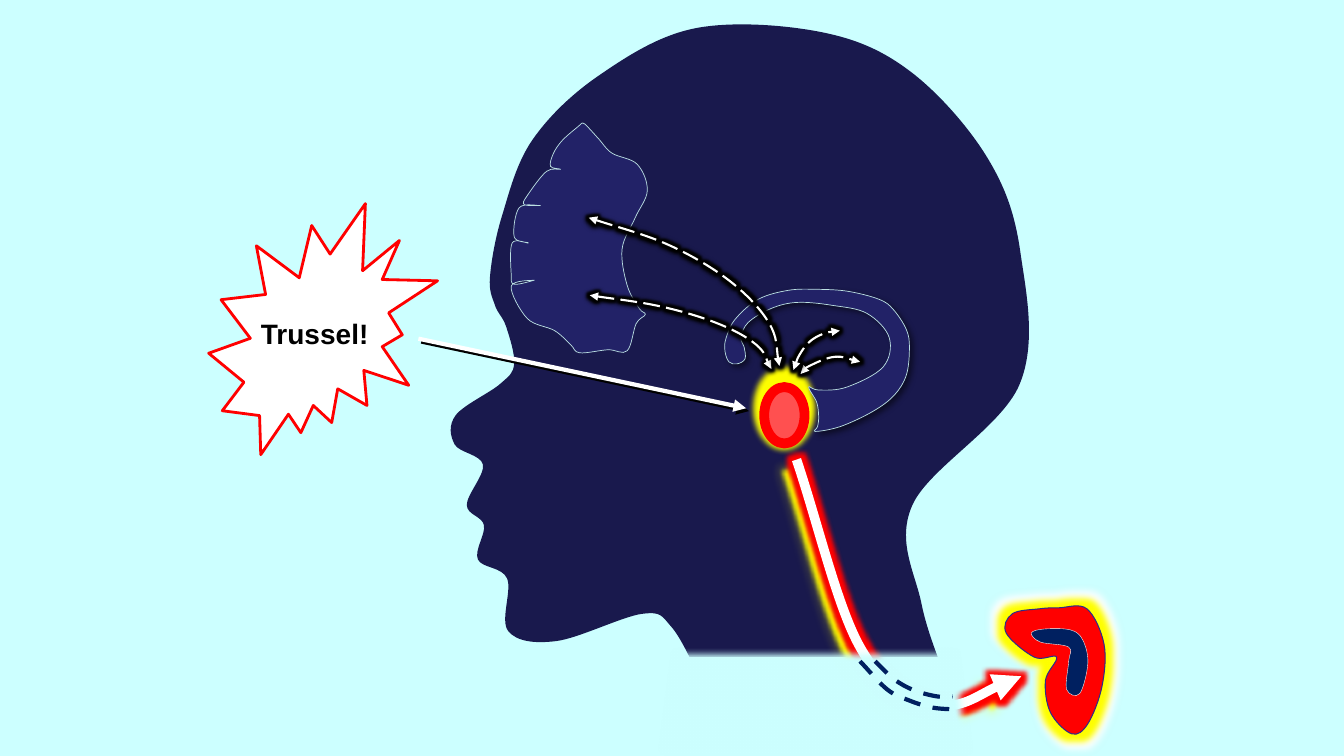
"""Build a slide showing how a perceived threat sets off the stress response."""
import lxml.etree
import pptx
import pptx.dml.color
import pptx.enum.dml
import pptx.enum.shapes
import pptx.enum.text
import pptx.oxml.ns
import pptx.util

PX = 9144
RGBColor = pptx.dml.color.RGBColor
MSO_SHAPE = pptx.enum.shapes.MSO_SHAPE
DASH = pptx.enum.dml.MSO_LINE.DASH
LONG_DASH = pptx.enum.dml.MSO_LINE.LONG_DASH
qn = pptx.oxml.ns.qn

SKY = RGBColor(0xCC, 0xFF, 0xFF)
HEAD_BLUE = RGBColor(0x19, 0x19, 0x4D)
BRAIN_BLUE = RGBColor(0x22, 0x22, 0x67)
BRAIN_EDGE = RGBColor(0xBB, 0xE0, 0xE3)
GLAND_EDGE = RGBColor(0x2D, 0x2D, 0x8A)
NAVY = RGBColor(0x00, 0x20, 0x60)
RED = RGBColor(0xFF, 0x00, 0x00)
SOFT_RED = RGBColor(0xFF, 0x50, 0x50)
YELLOW = RGBColor(0xFF, 0xFF, 0x00)
WHITE = RGBColor(0xFF, 0xFF, 0xFF)
BLACK = RGBColor(0x00, 0x00, 0x00)


def draw_curve(knots, closed=False):
    """Draw a smooth curve through the knots."""
    knots = [(x * PX, y * PX) for x, y in knots]
    if closed:
        chain = [knots[-1], *knots, *knots[:2]]
    else:
        (ax, ay), (bx, by) = knots[:2]
        (yx, yy), (zx, zy) = knots[-2:]
        chain = [(2 * ax - bx, 2 * ay - by), *knots, (2 * zx - yx, 2 * zy - yy)]
    builder = shapes.build_freeform(*knots[0])
    builder.add_line_segments(chain[2:-1], close=closed)
    shape = builder.convert_to_shape()
    corner = (shape.left, shape.top)
    segments = list(shape._element.iter(qn("a:lnTo")))
    for segment, before, start, end, after in zip(segments, chain, chain[1:], chain[2:], chain[3:]):
        bend = lxml.etree.Element(qn("a:cubicBezTo"))
        leave = [s + (e - b) / 6 for b, s, e in zip(before, start, end)]
        arrive = [e - (a - s) / 6 for s, e, a in zip(start, end, after)]
        for point in (leave, arrive, end):
            x, y = (str(round(value - origin)) for value, origin in zip(point, corner))
            lxml.etree.SubElement(bend, qn("a:pt"), x=x, y=y)
        segment.getparent().replace(segment, bend)
    return shape


def paint(shape, fill=None, line=None, width=1, dash=None, ends=(),
          glow=None, shadow=None, soft=0):
    """Set fill, line, arrowheads and effects of a shape."""
    if hasattr(shape, "fill"):
        if fill is None:
            shape.fill.background()
        else:
            shape.fill.solid()
            shape.fill.fore_color.rgb = fill
    if line is None:
        shape.line.fill.background()
    else:
        shape.line.color.rgb = line
        shape.line.width = pptx.util.Pt(width)
        if dash:
            shape.line.dash_style = dash
        for end in ends:
            lxml.etree.SubElement(shape.line._get_or_add_ln(), qn(end), type="triangle")
    effects = lxml.etree.SubElement(shape._element.spPr, qn("a:effectLst"))
    for tag, effect in (("a:glow", glow), ("a:outerShdw", shadow)):
        if effect:
            color, alpha, values = effect
            node = lxml.etree.SubElement(effects, qn(tag),
                                         {key: str(value) for key, value in values.items()})
            tint = lxml.etree.SubElement(node, qn("a:srgbClr"), val=str(color))
            lxml.etree.SubElement(tint, qn("a:alpha"), val=str(alpha * 1000))
    if soft:
        lxml.etree.SubElement(effects, qn("a:softEdge"), rad=str(soft * PX))


presentation = pptx.Presentation()
presentation.slide_width = 1333 * PX
presentation.slide_height = 750 * PX
slide = presentation.slides.add_slide(presentation.slide_layouts[6])
slide.background.fill.solid()
slide.background.fill.fore_color.rgb = SKY
shapes = slide.shapes

head = draw_curve([
    (697, 677), (666, 622), (637, 609), (552, 636), (504, 626), (503, 574), (474, 555),
    (480, 521), (463, 501), (479, 461), (451, 441), (452, 412), (496, 381), (510, 361),
    (502, 324), (491, 303), (486, 275), (498, 214), (528, 139), (594, 75), (690, 28),
    (815, 32), (903, 71), (979, 156), (1012, 250), (1011, 382), (905, 501), (914, 599),
    (943, 688)])
paint(head, HEAD_BLUE)

neck_cover = shapes.add_shape(MSO_SHAPE.RECTANGLE, 652 * PX, 652 * PX, 390 * PX, 97 * PX)
paint(neck_cover, SKY)

nerve = draw_curve([(790, 456), (853, 642), (927, 699), (1013, 671)])
paint(nerve, line=WHITE, width=6.75, ends=["a:tailEnd"],
      glow=(RED, 100, {"rad": 10 * PX}),
      shadow=(YELLOW, 100, {"blurRad": 5 * PX, "dist": 14 * PX, "dir": 135 * 60000}))

hypothalamus = shapes.add_shape(MSO_SHAPE.OVAL, 758 * PX, 384 * PX, 40 * PX, 56 * PX)
paint(hypothalamus, SOFT_RED, RED, 7,
      shadow=(YELLOW, 100, {"blurRad": 6 * PX, "sx": 122000, "sy": 125000, "algn": "b"}))

threat_arrow = shapes.add_connector(pptx.enum.shapes.MSO_CONNECTOR.STRAIGHT,
                                    415 * PX, 336 * PX, 740 * PX, 405 * PX)
paint(threat_arrow, line=WHITE, width=3, ends=["a:tailEnd"],
      shadow=(BLACK, 100, {"dist": 4 * PX, "dir": 45 * 60000}))

gland = draw_curve([
    (1004, 609), (1031, 604), (1050, 603), (1078, 604), (1095, 639), (1093, 681),
    (1079, 718), (1063, 728), (1042, 707), (1037, 675), (1048, 652), (1026, 652),
    (998, 628)], closed=True)
paint(gland, RED, GLAND_EDGE, 0.75,
      glow=(YELLOW, 100, {"rad": 14 * PX}),
      shadow=(WHITE, 100, {"sx": 110000, "sy": 110000, "algn": "ctr"}))

gland_core = draw_curve([
    (1036, 624), (1062, 625), (1074, 635), (1079, 658), (1071, 688), (1058, 684),
    (1060, 656), (1060, 642), (1032, 637), (1023, 628)], closed=True)
paint(gland_core, NAVY, WHITE, 0.25)

body_fade = shapes.add_shape(MSO_SHAPE.TRAPEZOID, 651 * PX, 642 * PX, 316 * PX, 108 * PX)
body_fade.adjustments[0] = 0.13
paint(body_fade, SKY, soft=7)

for hidden_nerve in (
        [(868, 656), (887, 674), (907, 685), (930, 691), (945, 691)],
        [(853, 656), (880, 684), (902, 695), (925, 702), (949, 704)]):
    paint(draw_curve(hidden_nerve), line=NAVY, width=3, dash=DASH)

hippocampus = draw_curve([
    (802, 384), (810, 399), (812, 413), (811, 423), (809, 428), (834, 423), (866, 408),
    (887, 392), (899, 372), (902, 345), (899, 327), (886, 307), (872, 297), (841, 289),
    (810, 287), (782, 288), (752, 297), (729, 317), (720, 336), (719, 348), (723, 359),
    (731, 361), (739, 356), (738, 344), (735, 335), (742, 320), (765, 306), (791, 300),
    (826, 303), (860, 311), (882, 335), (876, 364), (840, 384), (812, 387)], closed=True)
paint(hippocampus, BRAIN_BLUE, BRAIN_EDGE, 0.5,
      shadow=(BLACK, 50, {"blurRad": 6 * PX, "dist": 4 * PX, "dir": 45 * 60000}))

frontal_lobe = draw_curve([
    (566, 342), (575, 350), (603, 347), (622, 348), (631, 321), (640, 312), (634, 306),
    (622, 283), (617, 247), (630, 216), (642, 189), (632, 163), (607, 152), (594, 138),
    (583, 126), (578, 122), (574, 125), (558, 139), (549, 152), (546, 165), (556, 168),
    (542, 170), (523, 194), (520, 203), (536, 204), (515, 206), (510, 235), (524, 241),
    (508, 241), (507, 272), (510, 282), (530, 278), (507, 284), (523, 316), (550, 328)],
    closed=True)
paint(frontal_lobe, BRAIN_BLUE, BRAIN_EDGE, 0.5)

for signal in (
        [(585, 293), (655, 304), (712, 321), (750, 342), (765, 366)],
        [(584, 216), (663, 243), (724, 279), (763, 321), (773, 363)],
        [(794, 371), (803, 363), (828, 354), (853, 359)],
        [(787, 367), (793, 352), (803, 339), (817, 331), (833, 328)]):
    paint(draw_curve(signal), line=WHITE, width=1.5, dash=LONG_DASH,
          ends=["a:headEnd", "a:tailEnd"],
          glow=(BLACK, 100, {"rad": 5 * PX}),
          shadow=(BLACK, 100, {"blurRad": 4 * PX, "dist": PX, "dir": 90 * 60000}))

threat = shapes.add_shape(MSO_SHAPE.EXPLOSION2, 207 * PX, 202 * PX, 227 * PX, 249 * PX)
paint(threat, WHITE, RED, 2)
threat.text_frame.word_wrap = False
threat.text_frame.vertical_anchor = pptx.enum.text.MSO_ANCHOR.MIDDLE
threat_label = threat.text_frame.paragraphs[0]
threat_label.text = "Trussel!"
threat_label.alignment = pptx.enum.text.PP_ALIGN.CENTER
threat_word = threat_label.runs[0]
for attribute, value in {"name": "Arial", "size": pptx.util.Pt(20), "bold": True}.items():
    setattr(threat_word.font, attribute, value)
threat_word.font.color.rgb = BLACK

presentation.save("out.pptx")
